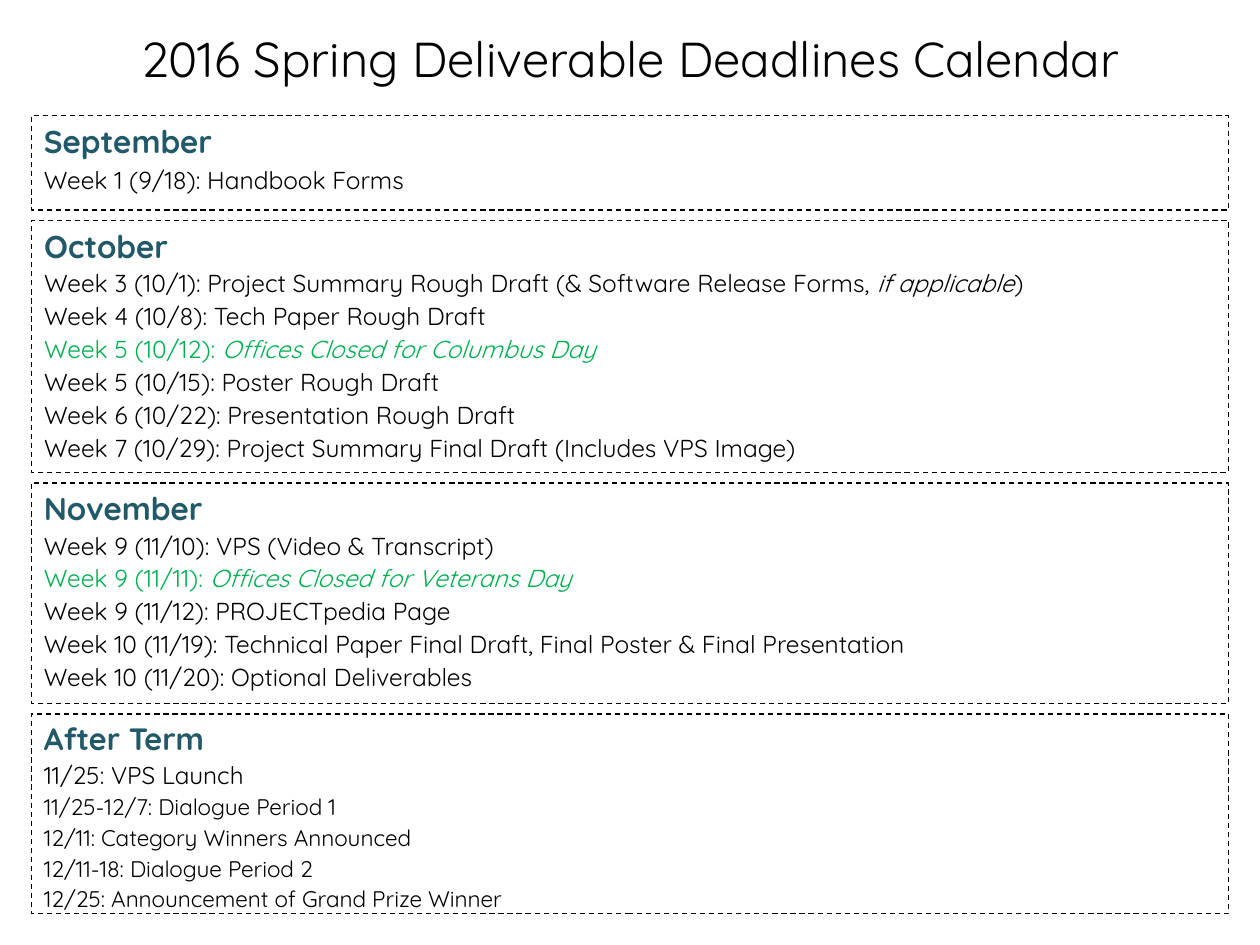
"""Build a one-slide calendar of deliverable deadlines."""
from dataclasses import dataclass

from lxml import etree
from pptx import Presentation
from pptx.dml.color import RGBColor
from pptx.enum import dml, text
from pptx.oxml import ns
from pptx.util import Pt

PX = 9525


@dataclass(frozen=True)
class Theme:
    face: str = "Quicksand"
    ink: str = "000000"
    head: str = "215968"
    off: str = "00B050"
    title: float = 28
    month: float = 18
    item: float = 14
    line: float = 0.75


T = Theme()


def add_run(para, words, size, color, bold=False, slant=False):
    run = para.add_run()
    run.text = words
    font = run.font
    font.name, font.size = T.face, Pt(size)
    font.bold, font.italic = bold, slant
    font.color.rgb = RGBColor.from_string(color)


def add_para(frame, first, hang, space):
    para = frame.paragraphs[0] if first else frame.add_paragraph()
    para.alignment = text.PP_ALIGN.LEFT
    props = para._p.get_or_add_pPr()
    props.set("marL", str(hang * PX))
    props.set("indent", str(-hang * PX))
    etree.SubElement(props, ns.qn("a:buNone"))
    para.space_before = Pt(space)
    return para


# Each entry: plain words, slanted words, closing words, color, size
def_size = T.item
months = [
    ("September", 72, T.month, 3, [
        ("Week 1 (9/18): Handbook Forms", "", "", T.ink, def_size),
    ]),
    ("October", 192, T.month, 2, [
        ("Week 3 (10/1): Project Summary Rough Draft (& Software Release Forms, ",
         "if applicable", ")", T.ink, def_size),
        ("Week 4 (10/8): Tech Paper Rough Draft", "", "", T.ink, def_size),
        ("Week 5 (10/12): ", "Offices Closed for Columbus Day", "", T.off, def_size),
        ("Week 5 (10/15): Poster Rough Draft", "", "", T.ink, def_size),
        ("Week 6 (10/22): Presentation Rough Draft", "", "", T.ink, def_size),
        ("Week 7 (10/29): Project Summary Final Draft (Includes VPS Image)",
         "", "", T.ink, def_size),
    ]),
    ("November", 168, T.month, 2, [
        ("Week 9 (11/10): VPS (Video & Transcript)", "", "", T.ink, def_size),
        ("Week 9 (11/11): ", "Offices Closed for Veterans Day", "", T.off, def_size),
        ("Week 9 (11/12): PROJECTpedia Page", "", "", T.ink, def_size),
        ("Week 10 (11/19): Technical Paper Final Draft, Final Poster & Final Presentation",
         "", "", T.ink, def_size),
        ("Week 10 (11/20): Optional Deliverables", "", "", T.ink, def_size),
    ]),
    ("After Term", 152, 17.6, 2, [
        ("11/25: VPS Launch", "", "", T.ink, 13.9),
        ("11/25-12/7: Dialogue Period 1", "", "", T.ink, 12.9),
        ("12/11: Category Winners Announced", "", "", T.ink, 12.9),
        ("12/11-18: Dialogue Period 2", "", "", T.ink, 12.9),
        ("12/25: Announcement of Grand Prize Winner", "", "", T.ink, 12.9),
    ]),
]

deck = Presentation()
deck.slide_width, deck.slide_height = 960 * PX, 720 * PX
slide = deck.slides.add_slide(deck.slide_layouts[1])

title = slide.shapes.title
title.left, title.top, title.width, title.height = 0, 16 * PX, 960 * PX, 56 * PX
title.text_frame.vertical_anchor = text.MSO_ANCHOR.MIDDLE
para = title.text_frame.paragraphs[0]
para.alignment = text.PP_ALIGN.CENTER
add_run(para, "2016 Spring Deliverable Deadlines Calendar", T.title, T.ink)

left, top, wide, gap = 24, 88, 912, 8
for name, high, size, space, items in months:
    if name == "October":
        box = slide.placeholders[1]
    else:
        box = slide.shapes.add_textbox(0, 0, PX, PX)
    box.left, box.top = left * PX, top * PX
    box.width, box.height = wide * PX, high * PX
    box.line.color.rgb = RGBColor.from_string(T.ink)
    box.line.width = Pt(T.line)
    box.line.dash_style = dml.MSO_LINE.DASH
    frame = box.text_frame
    frame.word_wrap = True
    frame.auto_size = text.MSO_AUTO_SIZE.NONE
    frame.vertical_anchor = text.MSO_ANCHOR.TOP
    add_run(add_para(frame, True, 0, 0), name, size, T.head, bold=True)
    for plain, slant, close, color, size in items:
        para = add_para(frame, False, 168, space)
        for words in (plain, slant, close):
            if words:
                add_run(para, words, size, color, slant=words == slant)
    top += high + gap

deck.save("out.pptx")
